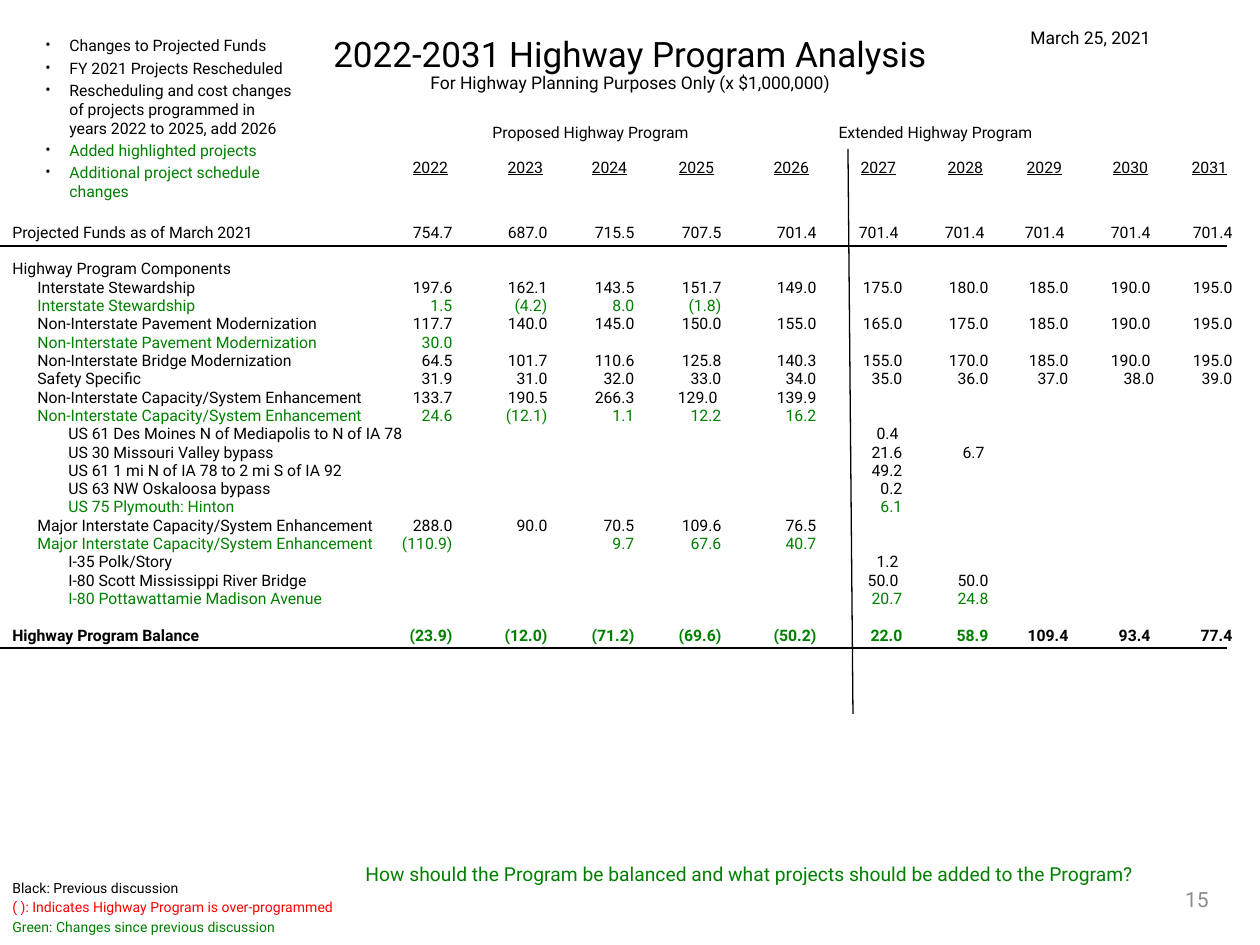
from lxml.etree import SubElement
from pptx import Presentation
from pptx.dml.color import RGBColor
from pptx.enum.shapes import MSO_CONNECTOR as CONN
from pptx.enum.text import MSO_ANCHOR as ANCHOR, MSO_AUTO_SIZE as AUTO, PP_ALIGN as ALIGN
from pptx.oxml.ns import qn
from pptx.util import Inches, Pt

PX = 7257  # EMU per pixel, 126 pixels to the inch
FONT = "Roboto"
BLACK, GREEN, RED, GRAY = "000000", "008000", "FF0000", "8C8C8C"

prs = Presentation()
prs.slide_width, prs.slide_height = Inches(10), Inches(7.5)
s = prs.slides.add_slide(prs.slide_layouts[5])


def add_box(left, top, width, height):
    sp = s.shapes.add_textbox(left * PX, top * PX, width * PX, height * PX)
    sp.text_frame.word_wrap = True
    return sp.text_frame


def add_paragraph(tf, runs, size, before=0, spacing=1, align=ALIGN.LEFT, tabs=()):
    """Fill the next paragraph with (text, colour, bold, underline) runs; tabs are (px, kind)."""
    p = tf.paragraphs[0] if not tf.paragraphs[0].runs else tf.add_paragraph()
    p.alignment, p.line_spacing, p.space_before = align, spacing, Pt(before)
    for text, color, bold, underline in runs:
        r = p.add_run()
        r.text = text
        r.font.name, r.font.size = FONT, Pt(size)
        r.font.bold, r.font.underline = bold, underline
        r.font.color.rgb = RGBColor.from_string(color)
    if tabs:
        tab_list = SubElement(p._p.get_or_add_pPr(), qn("a:tabLst"))
        for position, kind in tabs:
            SubElement(tab_list, qn("a:tab"), pos=str(position * PX), algn=kind)
    return p


# Title and subtitle
title = s.shapes.title
title.left, title.top, title.width, title.height = 0, 6 * PX, 1260 * PX, 88 * PX
tf = title.text_frame
tf.word_wrap, tf.auto_size, tf.vertical_anchor = True, AUTO.NONE, ANCHOR.TOP
tf.margin_top = 45 * PX
add_paragraph(tf, [("2022-2031 Highway Program Analysis", BLACK, False, False)],
              20, spacing=0.5, align=ALIGN.CENTER)
add_paragraph(tf, [("For Highway Planning Purposes Only (x $1,000,000)", BLACK, False, False)],
              10, before=5, spacing=0.5, align=ALIGN.CENTER)

# Column headings
tf = add_box(0, 125, 1260, 62)
add_paragraph(tf, [("\tProposed Highway Program\tExtended Highway Program", BLACK, False, False)],
              9, spacing=0.5, tabs=[(578, "ctr"), (923, "ctr")])
year_centers = [418, 513, 597, 684, 779, 866, 953, 1032, 1118, 1197]
year_runs = []
for year in range(2022, 2032):
    year_runs += [("\t", BLACK, False, False), (str(year), BLACK, False, True)]
add_paragraph(tf, year_runs, 9, before=14.2, spacing=0.5,
              tabs=[(x, "ctr") for x in year_centers])

# Funds, components and balance: level, label, values by year, colour
rows = [
    (0, "Projected Funds as of March 2021",
     "754.7,687.0,715.5,707.5,701.4,701.4 ,701.4 ,701.4 ,701.4 ,701.4", BLACK),
    (0, "Highway Program Components", "", BLACK),
    (1, "Interstate Stewardship",
     "197.6,162.1,143.5,151.7,149.0,175.0,180.0,185.0,190.0 ,195.0", BLACK),
    (1, "Interstate Stewardship", "1.5,(4.2),8.0,(1.8)", GREEN),
    (1, "Non-Interstate Pavement Modernization",
     "117.7,140.0,145.0,150.0,155.0,165.0,175.0,185.0,190.0 ,195.0", BLACK),
    (1, "Non-Interstate Pavement Modernization", "30.0", GREEN),
    (1, "Non-Interstate Bridge Modernization",
     "64.5,101.7,110.6,125.8,140.3,155.0,170.0,185.0,190.0 ,195.0", BLACK),
    (1, "Safety Specific", "31.9,31.0,32.0,33.0,34.0,35.0,36.0,37.0,38.0,39.0", BLACK),
    (1, "Non-Interstate Capacity/System Enhancement", "133.7,190.5,266.3,129.0 ,139.9", BLACK),
    (1, "Non-Interstate Capacity/System Enhancement", "24.6,(12.1),1.1,12.2,16.2", GREEN),
    (2, "US 61 Des Moines N of Mediapolis to N of IA 78", ",,,,,0.4 ", BLACK),
    (2, "US 30 Missouri Valley bypass", ",,,,,21.6,6.7 ", BLACK),
    (2, "US 61 1 mi N of IA 78 to 2 mi S of IA 92", ",,,,,49.2", BLACK),
    (2, "US 63 NW Oskaloosa bypass", ",,,,,0.2", BLACK),
    (2, "US 75 Plymouth: Hinton", ",,,,,6.1", GREEN),
    (1, "Major Interstate Capacity/System Enhancement", "288.0,90.0,70.5,109.6,76.5", BLACK),
    (1, "Major Interstate Capacity/System Enhancement", "(110.9),,9.7,67.6,40.7", GREEN),
    (2, "I-35 Polk/Story", ",,,,,1.2 ", BLACK),
    (2, "I-80 Scott Mississippi River Bridge", ",,,,,50.0 ,50.0", BLACK),
    (2, "I-80 Pottawattamie Madison Avenue", ",,,,,20.7,24.8", GREEN),
]
value_rights = [440, 535, 622, 709, 804, 890, 976, 1056, 1142, 1220]
row_tabs = [(25, "l"), (56, "l")] + [(x, "r") for x in value_rights]
ROW_GAP, SECTION_GAP = 4.5, 15
tf = add_box(0, 198, 1260, 485)
tf.margin_top = 32 * PX
for i, (level, label, values, color) in enumerate(rows):
    text = "\t" * level + label
    if values:
        text += "\t" + values.replace(",", "\t")
    before = 0 if i == 0 else SECTION_GAP if level == 0 else ROW_GAP
    add_paragraph(tf, [(text, color, False, False)], 9, before, 0.55, tabs=row_tabs)
balance_runs = [
    ("Highway Program Balance", BLACK, True, False),
    ("\t(23.9)\t(12.0)\t(71.2)\t(69.6)\t(50.2)\t22.0\t58.9", GREEN, True, False),
    ("\t109.4\t93.4 \t77.4", BLACK, True, False),
]
add_paragraph(tf, balance_runs, 9, SECTION_GAP, 0.55, tabs=row_tabs)

# Rules under the funds and the balance, and the divider between programs
for x1, y1, x2, y2 in [(0, 246, 1227, 246), (853, 714, 848, 149), (0, 648, 1227, 648)]:
    line = s.shapes.add_connector(CONN.STRAIGHT, x1 * PX, y1 * PX, x2 * PX, y2 * PX)
    line.line.color.rgb = RGBColor.from_string(BLACK)
    line.line.width = Pt(0.75)
    SubElement(line._element.spPr, qn("a:effectLst"))

# Slide number, date and question
tf = add_box(927, 874, 294, 50)
tf.vertical_anchor = ANCHOR.MIDDLE
add_paragraph(tf, [("15", GRAY, False, False)], 12, align=ALIGN.RIGHT)
add_paragraph(add_box(950, 21, 281, 34), [("March 25, 2021", BLACK, False, False)],
              10, align=ALIGN.CENTER)
question = "How should the Program be balanced and what projects should be added to the Program?"
add_paragraph(add_box(353, 856, 881, 37), [(question, GREEN, False, False)], 11)

# Colour legend
tf = add_box(0, 873, 483, 71)
legend = [
    ("Black: Previous discussion", BLACK),
    ("( ): Indicates Highway Program is over-programmed", RED),
    ("Green: Changes since previous discussion", GREEN),
]
for i, (text, color) in enumerate(legend):
    add_paragraph(tf, [(text, color, False, False)], 8, before=1.6 if i else 0)

# Bulleted list of changes
tf = add_box(33, 30, 276, 204)
changes = [
    ("Changes to Projected Funds", BLACK),
    ("FY 2021 Projects Rescheduled", BLACK),
    ("Rescheduling and cost changes of projects programmed in years 2022 to 2025, add 2026", BLACK),
    ("Added highlighted projects", GREEN),
    ("Additional project schedule changes", GREEN),
]
for i, (text, color) in enumerate(changes):
    p = add_paragraph(tf, [(text, color, False, False)], 9, before=1.8 if i else 0)
    pPr = p._p.get_or_add_pPr()
    pPr.set("marL", str(24 * PX))
    pPr.set("indent", str(-24 * PX))
    SubElement(SubElement(pPr, qn("a:buClr")), qn("a:srgbClr"), val=BLACK)
    SubElement(pPr, qn("a:buFont"), typeface=FONT)
    SubElement(pPr, qn("a:buChar"), char="•")

prs.save("out.pptx")
